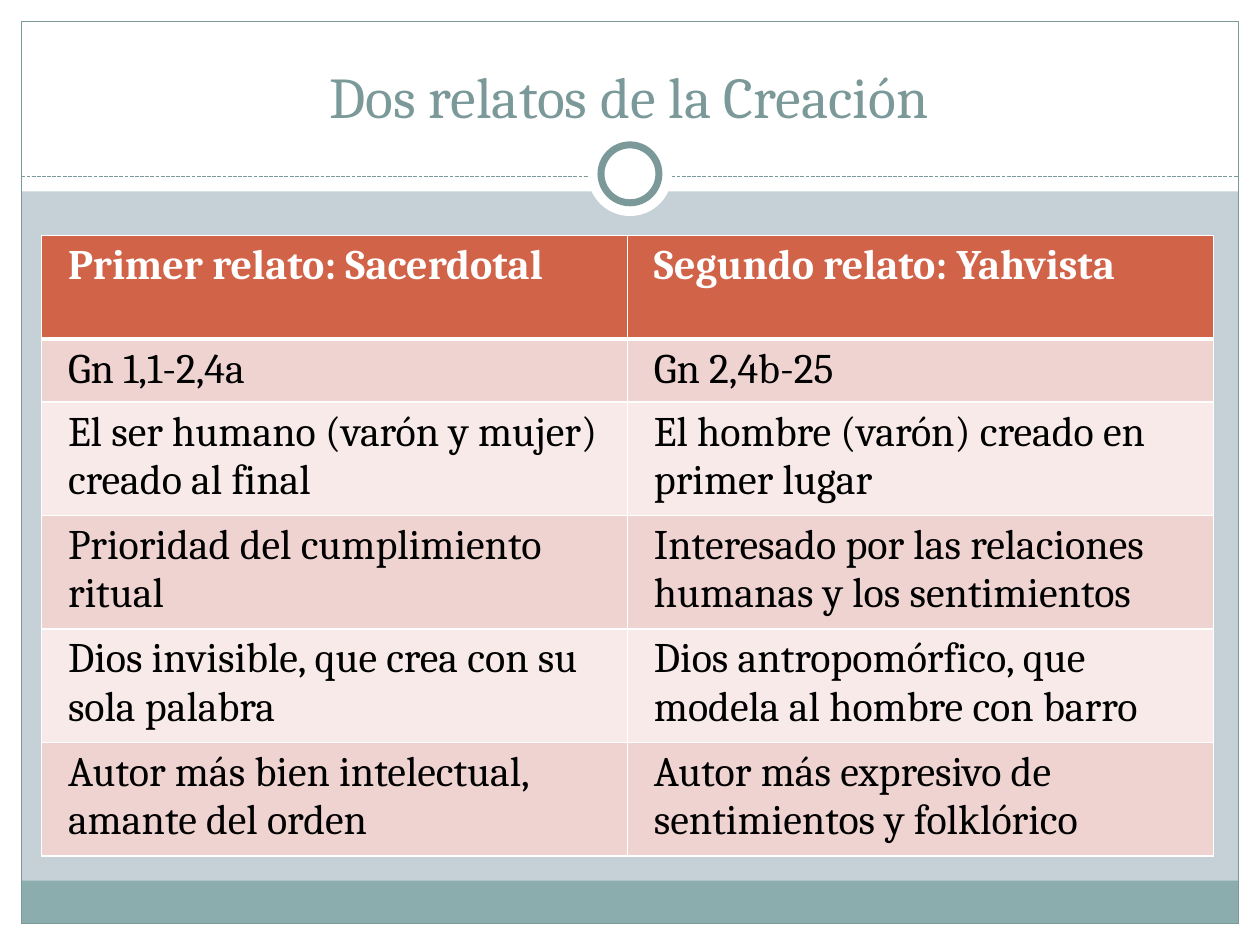
from lxml.etree import SubElement
from pptx import Presentation
from pptx.dml.color import RGBColor
from pptx.enum.dml import MSO_LINE
from pptx.enum.shapes import MSO_CONNECTOR, MSO_SHAPE
from pptx.enum.text import MSO_ANCHOR, PP_ALIGN
from pptx.oxml.ns import qn
from pptx.util import Inches, Pt

WIDTH, HEIGHT = 10, 7.5
MARGIN = 0.17
HEADER_HEIGHT = 1.52
RULE_Y = 1.4
FONT = "Cambria"
COLORS = {
    "background": "C5D1D7", "white": "FFFFFF", "black": "000000",
    "slate": "7C999A", "footer": "8CADAE",
    "heading": "D16349", "odd": "EED3D0", "even": "F7EAE9",
}
ACCOUNTS = [
    ("Primer relato: Sacerdotal", "Segundo relato: Yahvista"),
    ("Gn 1,1-2,4a", "Gn 2,4b-25"),
    ("El ser humano (varón y mujer) creado al final",
     "El hombre (varón) creado en primer lugar"),
    ("Prioridad del cumplimiento ritual",
     "Interesado por las relaciones humanas y los sentimientos"),
    ("Dios invisible, que crea con su sola palabra",
     "Dios antropomórfico, que modela al hombre con barro"),
    ("Autor más bien intelectual, amante del orden",
     "Autor más expresivo de sentimientos y folklórico"),
]
ROW_HEIGHTS = [0.82, 0.48] + [0.87] * 4
COLUMN_WIDTH = 4.65


def color(name):
    return RGBColor.from_string(COLORS[name])


def write(frame, text, size=24, ink="black", bold=False, align=PP_ALIGN.LEFT):
    frame.word_wrap = True
    paragraph = frame.paragraphs[0]
    paragraph.alignment = align
    run = paragraph.add_run()
    run.text = text
    run.font.name = FONT
    run.font.size = Pt(size)
    run.font.bold = bold
    run.font.color.rgb = color(ink)


def add_figure(slide, kind, left, top, width, height,
               fill=None, line=None, weight=0.75):
    figure = slide.shapes.add_shape(
        kind, Inches(left), Inches(top), Inches(width), Inches(height))
    figure.shadow.inherit = False
    if fill:
        figure.fill.solid()
        figure.fill.fore_color.rgb = color(fill)
    else:
        figure.fill.background()
    if line:
        figure.line.color.rgb = color(line)
        figure.line.width = Pt(weight)
    else:
        figure.line.fill.background()


def add_circle(slide, diameter, **style):
    """Centre a circle on the dashed rule's upper edge."""
    add_figure(slide, MSO_SHAPE.OVAL, (WIDTH - diameter) / 2,
               RULE_Y - 0.02 - diameter / 2, diameter, diameter, **style)


def add_frame(slide):
    inner_width, inner_height = WIDTH - 2 * MARGIN, HEIGHT - 2 * MARGIN
    for left, top, width, height in (
            (0, HEIGHT - MARGIN, WIDTH, MARGIN),
            (0, 0, WIDTH, HEADER_HEIGHT),
            (0, 0, MARGIN, HEIGHT),
            (WIDTH - MARGIN, 0, MARGIN, HEIGHT)):
        add_figure(slide, MSO_SHAPE.RECTANGLE, left, top, width, height,
                   fill="white")
    add_figure(slide, MSO_SHAPE.RECTANGLE, MARGIN, HEIGHT - 3 * MARGIN,
               inner_width, 2 * MARGIN, fill="footer")
    add_figure(slide, MSO_SHAPE.RECTANGLE, MARGIN, MARGIN,
               inner_width, inner_height, line="slate")


def add_dashed_rule(slide):
    rule = slide.shapes.add_connector(
        MSO_CONNECTOR.STRAIGHT, Inches(MARGIN), Inches(RULE_Y),
        Inches(WIDTH - MARGIN), Inches(RULE_Y))
    rule.line.color.rgb = color("slate")
    rule.line.width = Pt(0.75)
    rule.line.dash_style = MSO_LINE.SQUARE_DOT
    properties = rule.line._get_or_add_ln().getparent()
    SubElement(properties, qn("a:effectLst"))


def add_title(slide, text):
    title = slide.shapes.add_textbox(
        Inches(0.33), Inches(0.25), Inches(WIDTH - 0.67), Inches(0.83))
    title.text_frame.vertical_anchor = MSO_ANCHOR.BOTTOM
    write(title.text_frame, text, size=33, ink="slate", align=PP_ALIGN.CENTER)


def set_borders(cell, **weights):
    """Draw white borders; weights are points keyed by side L, R, T, B."""
    properties = cell._tc.get_or_add_tcPr()
    for side, weight in weights.items():
        border = SubElement(properties, qn(f"a:ln{side}"), w=str(Pt(weight)))
        fill = SubElement(border, qn("a:solidFill"))
        SubElement(fill, qn("a:srgbClr"), val=COLORS["white"])


def fill_cell(cell, text, row):
    heading = row == 0
    cell.margin_left = cell.margin_right = Inches(0.21)
    cell.margin_top = cell.margin_bottom = Inches(0.05)
    set_borders(cell, L=1, R=1, T=3 if row == 1 else 1, B=3 if heading else 1)
    cell.fill.solid()
    band = "odd" if row % 2 else "even"
    cell.fill.fore_color.rgb = color("heading" if heading else band)
    write(cell.text_frame, text, ink="white" if heading else "black",
          bold=heading)


def add_comparison(slide):
    columns = len(ACCOUNTS[0])
    table = slide.shapes.add_table(
        len(ACCOUNTS), columns, Inches(0.33), Inches(1.87),
        Inches(columns * COLUMN_WIDTH), Inches(sum(ROW_HEIGHTS))).table
    for column in table.columns:
        column.width = Inches(COLUMN_WIDTH)
    for row, texts in enumerate(ACCOUNTS):
        table.rows[row].height = Inches(ROW_HEIGHTS[row])
        for column, text in enumerate(texts):
            fill_cell(table.cell(row, column), text, row)


def main():
    deck = Presentation()
    deck.slide_width, deck.slide_height = Inches(WIDTH), Inches(HEIGHT)
    slide = deck.slides.add_slide(deck.slide_layouts[6])
    slide.background.fill.solid()
    slide.background.fill.fore_color.rgb = color("background")
    add_frame(slide)
    add_dashed_rule(slide)
    add_circle(slide, 0.67, fill="white")
    add_circle(slide, 0.46, fill="white", line="slate", weight=4)
    add_title(slide, "Dos relatos de la Creación")
    add_comparison(slide)
    deck.save("out.pptx")


if __name__ == "__main__":
    main()
